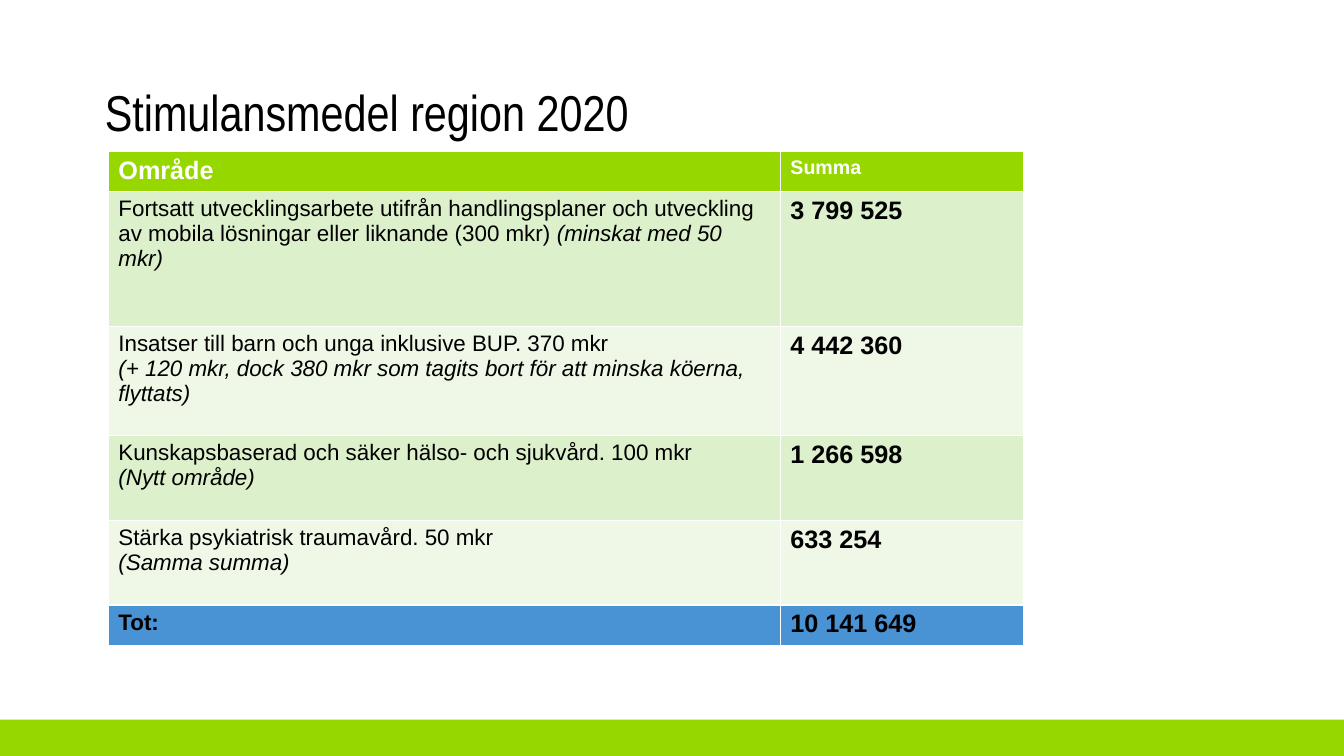
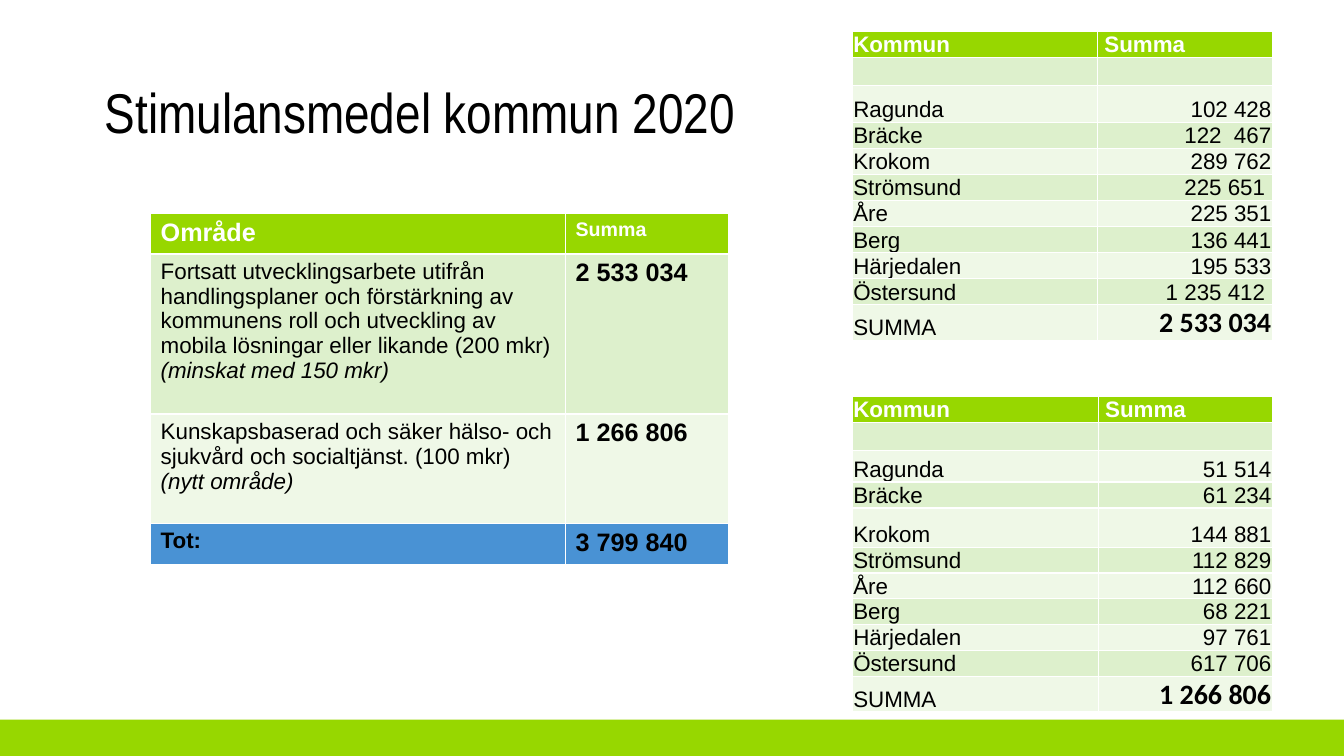
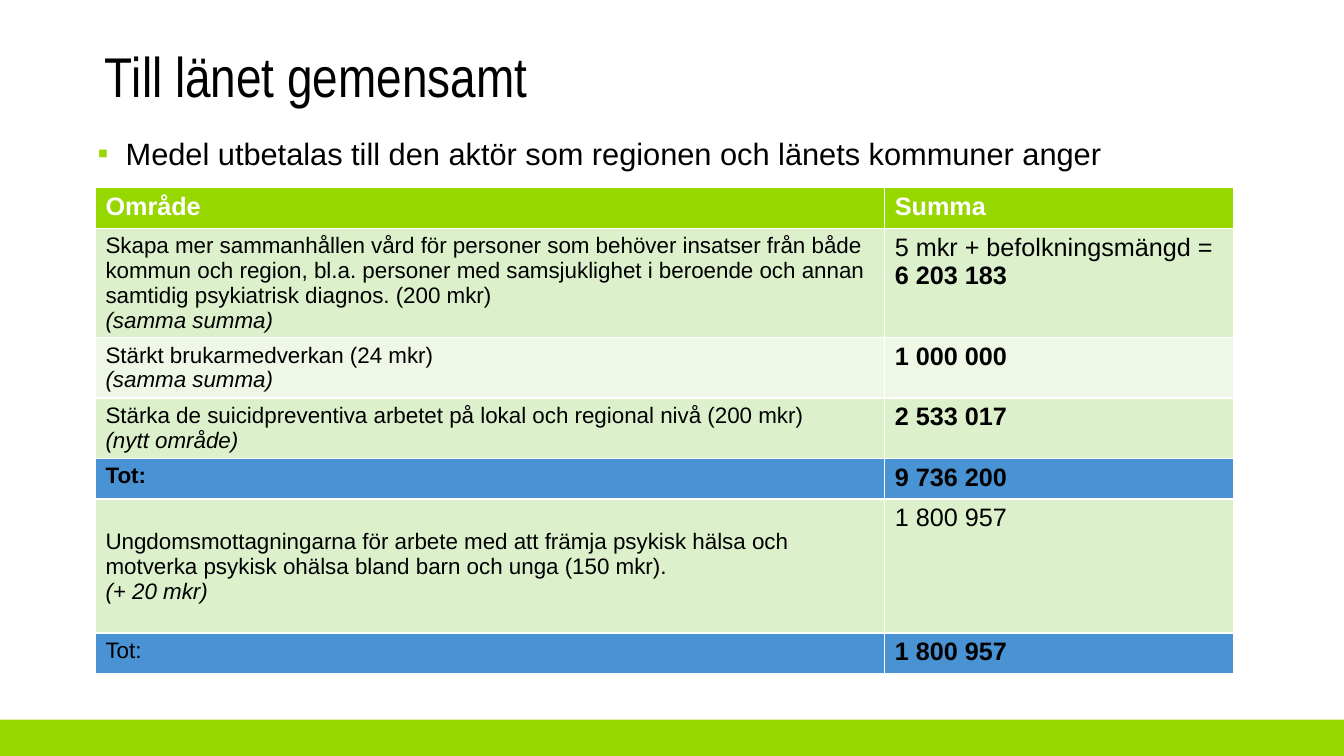
from lxml.etree import SubElement
from pptx import Presentation
from pptx.dml.color import RGBColor
from pptx.enum.shapes import MSO_SHAPE as Shape
from pptx.enum.text import MSO_ANCHOR as Anchor, MSO_AUTO_SIZE as AutoSize, PP_ALIGN as Align
from pptx.oxml.ns import qn
from pptx.util import Pt

GREEN, BLACK, WHITE = "97D700", "000000", "FFFFFF"
ROW_FILLS = {"head": GREEN, "dark": "DDF0CC", "light": "EFF8E7", "total": "4992D4"}
TEXT_STYLES = {
    "head": dict(size=18, color=WHITE, bold=True),
    "small head": dict(size=14, color=WHITE, bold=True),
    "list head": dict(size=16, color=WHITE, bold=True),
    "plain": dict(size=16),
    "note": dict(size=16, italic=True),
    "label": dict(size=16, bold=True),
    "amount": dict(size=18),
    "sum": dict(size=18, bold=True),
    "list sum": dict(size=20, bold=True, name="Calibri"),
    "bullet": dict(size=22),
}
AREA_INSETS = (7.2, 3.6, 7.2, 3.6)
LIST_INSETS = (0.7, 0.7, 0.7, 0)
BLANK_LINE = 18


def line(text, style="plain"):
    return [(style, text)]


def with_note(text, note):
    return [line(text), line(note, "note")]


def total_row(amount, label_style="label"):
    return (29.2, "total", [line("Tot:", label_style)], [line(amount, "sum")])


def head_row(sum_style="small head"):
    return (29, "head", [line("Område", "head")], [line("Summa", sum_style)])


REGION_ROWS = [
    head_row(),
    (96, "dark",
     [[("plain", "Fortsatt utvecklingsarbete utifrån handlingsplaner och utveckling av mobila "
        "lösningar eller liknande (300 mkr) "), ("note", "(minskat med 50 mkr)")]],
     [line("3 799 525", "sum")]),
    (78, "light",
     with_note("Insatser till barn och unga inklusive BUP. 370 mkr",
               "(+ 120 mkr, dock 380 mkr som tagits bort för att minska köerna, flyttats)"),
     [line("4 442 360", "sum")]),
    (60.6, "dark",
     with_note("Kunskapsbaserad och säker hälso- och sjukvård. 100 mkr", "(Nytt område)"),
     [line("1 266 598", "sum")]),
    (60.6, "light",
     with_note("Stärka psykiatrisk traumavård. 50 mkr", "(Samma summa)"),
     [line("633 254", "sum")]),
    total_row("10 141 649"),
]

MUNICIPAL_ROWS = [
    head_row(),
    (114.4, "dark",
     [[("plain", "Fortsatt utvecklingsarbete utifrån handlingsplaner och förstärkning av "
        "kommunens roll och utveckling av mobila lösningar eller likande (200 mkr) "),
       ("note", "(minskat med 150 mkr)")]],
     [line("2 533 034", "sum")]),
    (78, "light",
     with_note("Kunskapsbaserad och säker hälso- och sjukvård och socialtjänst. (100 mkr)",
               "(nytt område)"),
     [line("1 266 806", "sum")]),
    total_row("3 799 840"),
]

COUNTY_ROWS = [
    head_row("head"),
    (78, "dark",
     with_note("Skapa mer sammanhållen vård för personer som behöver insatser från både kommun "
               "och region, bl.a. personer med samsjuklighet i beroende och annan samtidig "
               "psykiatrisk diagnos. (200 mkr)", "(samma summa)"),
     [line("5 mkr + befolkningsmängd =", "amount"), line("6 203 183", "sum")]),
    (43, "light",
     with_note("Stärkt brukarmedverkan (24 mkr)", "(samma summa)"),
     [line("1 000 000", "sum")]),
    (43, "dark",
     with_note("Stärka de suicidpreventiva arbetet på lokal och regional nivå (200 mkr)",
               "(nytt område)"),
     [line("2 533 017", "sum")]),
    total_row("9 736 200"),
    (95.7, "dark",
     with_note("Ungdomsmottagningarna för arbete med att främja psykisk hälsa och motverka "
               "psykisk ohälsa bland barn och unga (150 mkr).", "(+ 20 mkr)"),
     [line("1 800 957", "amount")]),
    total_row("1 800 957", "plain"),
]

MUNICIPALITIES = ["Ragunda", "Bräcke", "Krokom", "Strömsund", "Åre", "Berg", "Härjedalen",
                  "Östersund"]
MUNICIPAL_LISTS = [
    dict(top=22.3, widths=(175, 125), heights=[18.6, 18, 26.4] + [18.6] * 7 + [25],
         amounts=["102 428", "122  467", "289 762", "225 651 ", "225 351", "136 441",
                  "195 533", "1 235 412 "], total="2 533 034"),
    dict(top=283.3, widths=(175.6, 124.4), heights=[18, 18, 22.3, 18, 28] + [18] * 5 + [25],
         amounts=["51 514", "61 234", "144 881", "112 829", "112 660", "68 221", "97 761",
                  "617 706"], total="1 266 806"),
]


def rgb(value):
    return RGBColor.from_string(value)


def add_run(paragraph, text, size, color=BLACK, bold=False, italic=False, name="Arial"):
    run = paragraph.add_run()
    run.text = text
    font = run.font
    font.size, font.name, font.bold, font.italic = Pt(size), name, bold, italic
    font.color.rgb = rgb(color)


def fill_cell(cell, paragraphs, fill, insets, anchor=Anchor.TOP, align=Align.LEFT):
    cell.fill.solid()
    cell.fill.fore_color.rgb = rgb(fill)
    cell.margin_left, cell.margin_top, cell.margin_right, cell.margin_bottom = map(Pt, insets)
    cell.vertical_anchor = anchor
    frame = cell.text_frame
    if not paragraphs:
        SubElement(frame.paragraphs[0]._p, qn("a:endParaRPr"), sz="1600")
    for index, runs in enumerate(paragraphs):
        paragraph = frame.add_paragraph() if index else frame.paragraphs[0]
        paragraph.alignment = align
        for style, text in runs:
            add_run(paragraph, text, **TEXT_STYLES[style])


def add_grid(slide, left, top, widths, heights):
    frame = slide.shapes.add_table(len(heights), len(widths), Pt(left), Pt(top),
                                   Pt(sum(widths)), Pt(sum(heights)))
    table = frame.table
    for column, width in zip(table.columns, widths):
        column.width = Pt(width)
    for row, height in zip(table.rows, heights):
        row.height = Pt(height)
    return table


def add_area_table(slide, left, top, widths, rows, lowered_row=None):
    table = add_grid(slide, left, top, widths, [row[0] for row in rows])
    for index, (_, kind, *cells) in enumerate(rows):
        for column, paragraphs in enumerate(cells):
            fill_cell(table.cell(index, column), paragraphs, ROW_FILLS[kind], AREA_INSETS)
    if lowered_row is not None:
        table.cell(lowered_row, 0).margin_top = Pt(AREA_INSETS[1] + BLANK_LINE)


def add_municipal_list(slide, top, widths, heights, amounts, total):
    table = add_grid(slide, 608.8, top, widths, heights)
    rows = [([line("Kommun", "list head")], [line(" Summa", "list head")]), ([], [])]
    rows += [([line(name)], [line(amount)]) for name, amount in zip(MUNICIPALITIES, amounts)]
    rows.append(([line("SUMMA")], [line(total, "list sum")]))
    for index, cells in enumerate(rows):
        kind = "head" if index == 0 else "dark" if index % 2 else "light"
        for column, paragraphs in enumerate(cells):
            align = Align.RIGHT if index and column else Align.LEFT
            fill_cell(table.cell(index, column), paragraphs, ROW_FILLS[kind], LIST_INSETS,
                      Anchor.BOTTOM, align)


def place(shape, left, top, width, height):
    shape.left, shape.top, shape.width, shape.height = map(Pt, (left, top, width, height))
    frame = shape.text_frame
    frame.word_wrap = True
    frame.auto_size = AutoSize.NONE
    frame.vertical_anchor = Anchor.MIDDLE
    paragraph = frame.paragraphs[0]
    paragraph.alignment = Align.LEFT
    paragraph.space_before = Pt(0)
    return paragraph


def add_slide(presentation, layout, title, top, size=40, width=824):
    slide = presentation.slides.add_slide(presentation.slide_layouts[layout])
    paragraph = place(slide.shapes.title, 67.7, top, width, 51)
    paragraph.line_spacing = 0.9
    add_run(paragraph, title, size, name="Arial Narrow")
    return slide


def add_master_band(presentation, slide):
    band = slide.shapes.add_shape(Shape.RECTANGLE, 0, Pt(514), presentation.slide_width, Pt(26))
    band.shadow.inherit = False
    band.fill.solid()
    band.fill.fore_color.rgb = rgb(GREEN)
    band.line.fill.background()
    band.element.nvSpPr.cNvPr.set("id", "99")
    presentation.slide_master.shapes.element.insert(2, band.element)


def add_bullet(shape, text):
    paragraph = place(shape, 62.6, 90, 824, 36)
    paragraph.line_spacing = 1.1
    properties = paragraph._p.get_or_add_pPr()
    properties.set("marL", str(Pt(20)))
    properties.set("indent", str(-Pt(20)))
    color = SubElement(properties, qn("a:buClr"))
    SubElement(color, qn("a:srgbClr"), val=GREEN)
    SubElement(properties, qn("a:buFont"), typeface="Arial")
    SubElement(properties, qn("a:buChar"), char="▪")
    add_run(paragraph, text, **TEXT_STYLES["bullet"])


def main():
    presentation = Presentation()
    presentation.slide_width, presentation.slide_height = Pt(960), Pt(540)

    region = add_slide(presentation, 5, "Stimulansmedel region 2020", 57, size=36, width=435.6)
    add_master_band(presentation, region)
    add_area_table(region, 77.4, 108, (480, 173.6), REGION_ROWS)

    municipal = add_slide(presentation, 5, "Stimulansmedel kommun 2020", 57)
    for municipal_list in MUNICIPAL_LISTS:
        add_municipal_list(municipal, **municipal_list)
    add_area_table(municipal, 107.6, 152.4, (296.4, 116.8), MUNICIPAL_ROWS)

    county = add_slide(presentation, 1, "Till länet gemensamt", 31)
    add_bullet(county.placeholders[1],
               "Medel utbetalas till den aktör som regionen och länets kommuner anger")
    add_area_table(county, 68.2, 134, (563.8, 249), COUNTY_ROWS, lowered_row=5)

    presentation.save("out.pptx")


if __name__ == "__main__":
    main()
